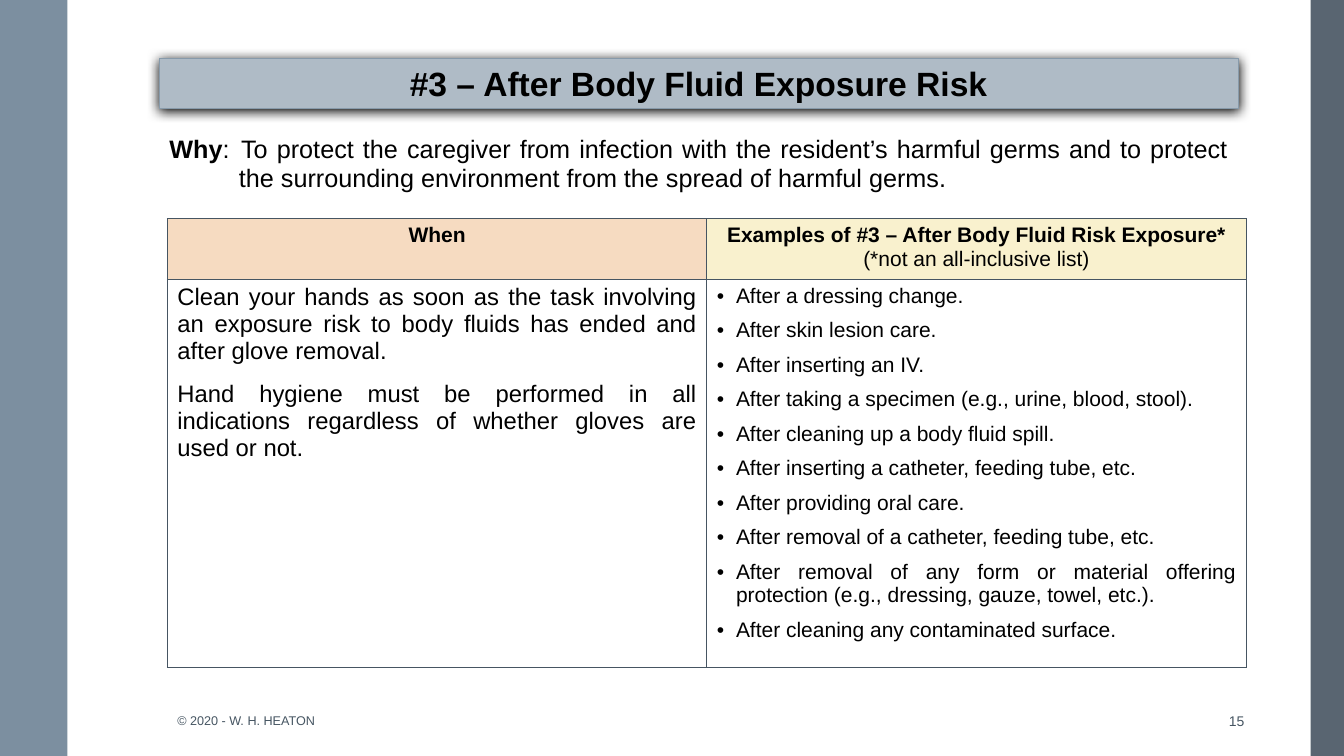
"""Build the hand hygiene slide on body fluid exposure risk."""
from lxml import etree
from pptx import Presentation
from pptx.dml.color import RGBColor
from pptx.enum.shapes import MSO_SHAPE as Shape
from pptx.enum.text import MSO_ANCHOR as Anchor, PP_ALIGN as Align
from pptx.oxml.ns import qn
from pptx.util import Inches, Pt

BLACK, WHITE, SLATE = "000000", "FFFFFF", "465562"
TITLE = "#3 – After Body Fluid Exposure Risk"
WHY = [("Why", True), (": \tTo protect the caregiver from infection with the resident’s harmful germs "
                       "and to protect the surrounding environment from the spread of harmful germs. ", False)]
HEADERS = [
    ([("When", True)], "F6DBC1"),
    ([("Examples of #3 – After Body Fluid Risk Exposure*", True), ("(*not an all-inclusive list)", False)], "F9F1CE"),
]
WHEN = [
    "Clean your hands as soon as the task involving an exposure risk to body fluids has ended and after glove removal.",
    "Hand hygiene must be performed in all indications regardless of whether gloves are used or not.",
]
EXAMPLES = [
    "After a dressing change.",
    "After skin lesion care.",
    "After inserting an IV.",
    "After taking a specimen (e.g., urine, blood, stool).",
    "After cleaning up a body fluid spill.",
    "After inserting a catheter, feeding tube, etc.",
    "After providing oral care.",
    "After removal of a catheter, feeding tube, etc.",
    "After removal of any form or material offering protection (e.g., dressing, gauze, towel, etc.).",
    "After cleaning any contaminated surface.",
]
SIDE_BARS = [(13, 0.33, "475562", 90), (0, 0.67, "6A8093", 88)]
FOOTERS = [(1.66, 4.35, "© 2020 - W. H. HEATON", 9, Align.LEFT), (11.77, 0.67, "15", 10, Align.RIGHT)]


def color(value):
    return RGBColor.from_string(value)


def child(parent, tag, **attributes):
    return etree.SubElement(parent, qn(tag), {key: str(value) for key, value in attributes.items()})


def write(frame, paragraphs, size, align, ink=BLACK, space=0, indent=0, bullet=None):
    for index, runs in enumerate(paragraphs):
        para = frame.paragraphs[0] if index == 0 else frame.add_paragraph()
        para.alignment = align
        para.space_before = para.space_after = Pt(space)
        properties = para._p.get_or_add_pPr()
        if indent:
            properties.set("marL", str(Inches(indent)))
            properties.set("indent", str(-Inches(indent)))
        if bullet:
            child(properties, "a:buFont", typeface="Arial")
            child(properties, "a:buChar", char=bullet)
        for text, bold in runs:
            span = para.add_run()
            span.text = text
            span.font.name, span.font.size, span.font.bold = "Arial", Pt(size), bold
            span.font.color.rgb = color(ink)


def add_rectangle(page, left, top, width, height, fill):
    box = page.shapes.add_shape(Shape.RECTANGLE, *map(Inches, (left, top, width, height)))
    box.shadow.inherit = False
    box.fill.solid()
    box.fill.fore_color.rgb = color(fill)
    box.line.fill.background()
    return box


def add_grid(page, left, top, widths, heights):
    table = page.shapes.add_table(len(heights), len(widths), Inches(left), Inches(top),
                                  Inches(sum(widths)), Inches(sum(heights))).table
    table.first_row = table.horz_banding = False
    for column, width in zip(table.columns, widths):
        column.width = Inches(width)
    for row, height in zip(table.rows, heights):
        row.height = Inches(height)
    return table


def style_cell(cell, fill, border):
    properties = cell._tc.get_or_add_tcPr()
    for side in ("L", "R", "T", "B"):
        edge = child(properties, f"a:ln{side}", w=Pt(1))
        child(child(edge, "a:solidFill"), "a:srgbClr", val=border)
    cell.fill.solid()
    cell.fill.fore_color.rgb = color(fill)


def add_title(page):
    box = add_rectangle(page, 1.58, 0.58, 10.7, 0.5, "AFBBC6")
    box.line.color.rgb = color("879AAA")
    box.line.width = Pt(0.75)
    effects = box._element.spPr.find(qn("a:effectLst"))
    shadow = child(effects, "a:outerShdw", blurRad=Pt(8.5), dist=Pt(1), dir=90 * 60000, rotWithShape=0)
    child(shadow, "a:srgbClr", val=BLACK)
    box.text_frame.word_wrap = True
    box.text_frame.vertical_anchor = Anchor.BOTTOM
    write(box.text_frame, [[(TITLE, True)]], 24, Align.CENTER)
    box.text_frame.paragraphs[0].line_spacing = 0.9


def add_guidance(page):
    table = add_grid(page, 1.66, 2.17, [5.35, 5.35], [0.56, 3.64])
    for column, (lines, fill) in enumerate(HEADERS):
        cell = table.cell(0, column)
        style_cell(cell, fill, SLATE)
        write(cell.text_frame, [[line] for line in lines], 15, Align.CENTER)
    when, examples = table.cell(1, 0), table.cell(1, 1)
    for cell in (when, examples):
        style_cell(cell, WHITE, SLATE)
    write(when.text_frame, [[(text, False)] for text in WHEN], 17, Align.JUSTIFY, space=6)
    write(examples.text_frame, [[(text, False)] for text in EXAMPLES], 15, Align.JUSTIFY,
          space=4, indent=0.19, bullet="•")


def add_why(page):
    cell = add_grid(page, 1.58, 1.3, [10.7], [0.7]).cell(0, 0)
    style_cell(cell, WHITE, WHITE)
    write(cell.text_frame, [WHY], 18, Align.JUSTIFY, indent=0.69)


def main():
    deck = Presentation()
    deck.slide_width, deck.slide_height = Inches(13.33), Inches(7.5)
    page = deck.slides.add_slide(deck.slide_layouts[6])
    for left, width, fill, opacity in SIDE_BARS:
        bar = add_rectangle(page, left, 0, width, 7.5, fill)
        tint = bar._element.spPr.find(qn("a:solidFill")).find(qn("a:srgbClr"))
        child(tint, "a:alpha", val=opacity * 1000)
    add_title(page)
    for left, width, text, size, align in FOOTERS:
        box = page.shapes.add_textbox(Inches(left), Inches(6.95), Inches(width), Inches(0.4))
        box.text_frame.word_wrap = True
        box.text_frame.vertical_anchor = Anchor.MIDDLE
        write(box.text_frame, [[(text, False)]], size, align, ink=SLATE)
    add_guidance(page)
    add_why(page)
    deck.save("out.pptx")


if __name__ == "__main__":
    main()
